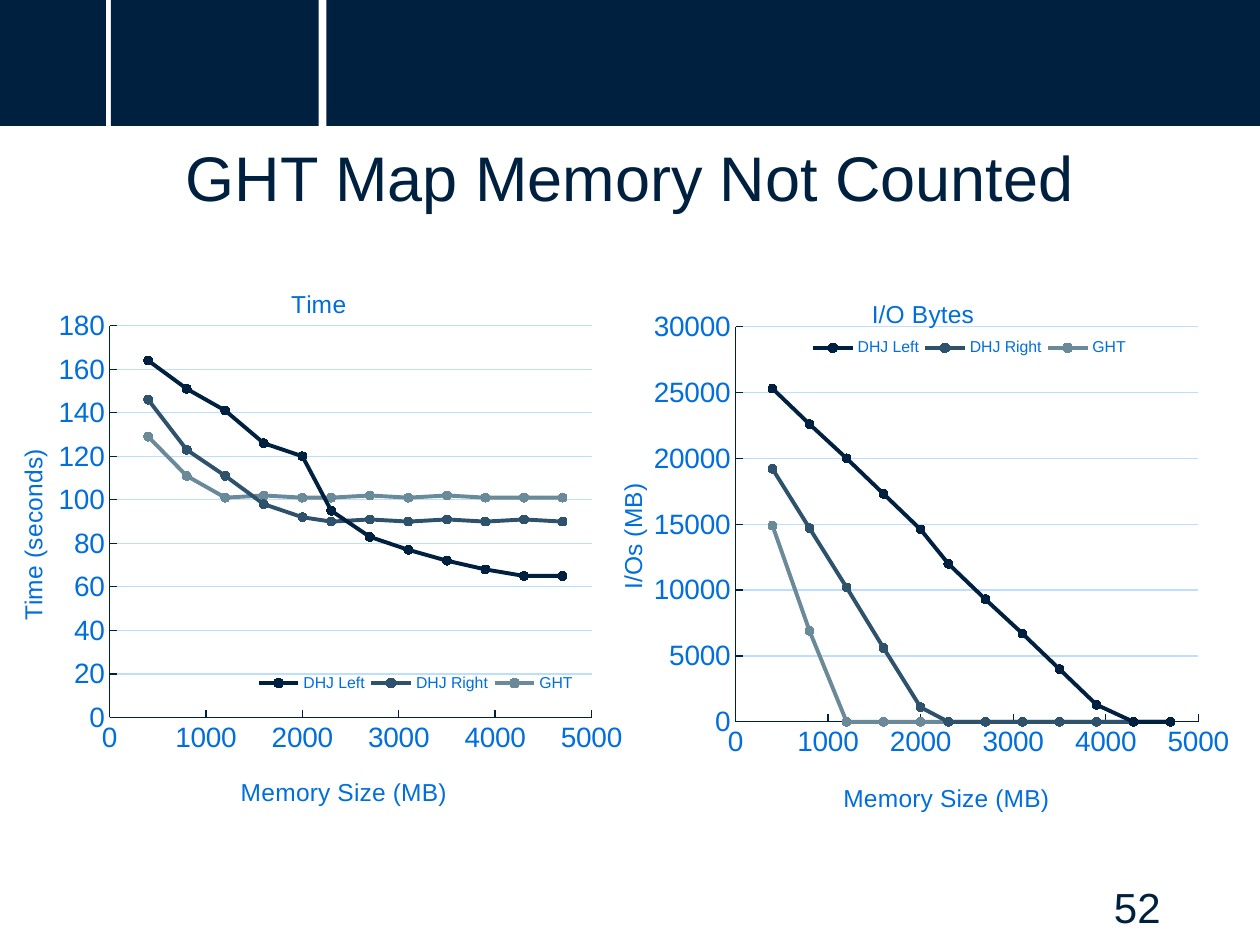
from dataclasses import dataclass

from pptx import Presentation
from pptx.chart.data import XyChartData
from pptx.dml.color import RGBColor
from pptx.enum.chart import XL_CHART_TYPE, XL_LEGEND_POSITION, XL_MARKER_STYLE, XL_TICK_MARK
from pptx.enum.shapes import MSO_SHAPE
from pptx.enum.text import MSO_ANCHOR, PP_ALIGN
from pptx.oxml import parse_xml
from pptx.oxml.ns import nsdecls
from pptx.util import Inches, Pt

NAVY = RGBColor(0x00, 0x20, 0x40)
SLATE = RGBColor(0x2E, 0x52, 0x6B)
STEEL = RGBColor(0x6A, 0x89, 0x99)
BLUE = RGBColor(0x00, 0x6E, 0xDC)
GRID = RGBColor(0xBC, 0xDE, 0xFF)
FONT = "Arial"
SERIES = (("DHJ Left", NAVY), ("DHJ Right", SLATE), ("GHT", STEEL))
MEMORY = [round(391 * step, -2) for step in range(1, 13)]


@dataclass
class Panel:
    title: str
    y_title: str
    box: tuple[float, ...]
    y_max: int
    y_step: int
    values: tuple[list[int], ...]
    plot: tuple[float, ...]
    title_at: tuple[float, ...]
    x_title_at: tuple[float, ...]
    y_title_at: tuple[float, ...]
    legend_at: tuple[float, ...]


PANELS = [
    Panel(
        "Time", "Time (seconds)", (0, 2.07, 5, 4.56), 180, 20,
        ([164, 151, 141, 126, 120, 95, 83, 77, 72, 68, 65, 65],
         [146, 123, 111, 98, 92, 90, 91, 90, 91, 90, 91, 90],
         [129, 111, 101, 102, 101, 101, 102, 101, 102, 101, 101, 101]),
        (0.174, 0.113, 0.765, 0.682),
        (0.455, 0.04), (0.375, 0.89), (0.02, 0.32), (0.4, 0.71, 0.52, 0.05),
    ),
    Panel(
        "I/O Bytes", "I/Os (MB)", (4.76, 2.15, 5.06, 4.52), 30000, 5000,
        ([25300, 22600, 20000, 17300, 14600, 12000, 9300, 6700, 4000, 1300, 0, 0],
         [19200, 14700, 10200, 5600, 1100] + [0] * 7,
         [14900, 6900] + [0] * 10),
        (0.213, 0.098, 0.726, 0.694),
        (0.42, 0.04), (0.375, 0.89), (0.02, 0.365), (0.325, 0.11, 0.51, 0.05),
    ),
]


def style_font(font, size: float, color: RGBColor) -> None:
    font.name = FONT
    font.size = Pt(size)
    font.bold = False
    font.color.rgb = color


def place(parent, box: tuple[float, ...], after: str = "", inner: bool = False) -> None:
    for old in parent.xpath("c:layout"):
        parent.remove(old)
    target = '<c:layoutTarget val="inner"/>' if inner else ""
    keys = ("x", "y", "w", "h")[:len(box)]
    modes = "".join(f'<c:{key}Mode val="edge"/>' for key in keys[:2])
    sizes = "".join(f'<c:{key} val="{value}"/>' for key, value in zip(keys, box))
    layout = parse_xml(
        f'<c:layout {nsdecls("c")}><c:manualLayout>{target}{modes}{sizes}'
        "</c:manualLayout></c:layout>"
    )
    if after:
        parent.xpath(after)[0].addnext(layout)
    else:
        parent.insert(0, layout)


def set_title(owner, text: str) -> None:
    tf = owner.text_frame
    tf.text = text
    style_font(tf.paragraphs[0].runs[0].font, 14, BLUE)


def style_axis(axis, title: str, maximum: int, step: int) -> None:
    axis.minimum_scale = 0
    axis.maximum_scale = maximum
    axis.major_unit = step
    axis.major_tick_mark = XL_TICK_MARK.INSIDE
    axis.minor_tick_mark = XL_TICK_MARK.NONE
    axis.format.line.color.rgb = NAVY
    axis.format.line.width = Pt(0.75)
    style_font(axis.tick_labels.font, 16, BLUE)
    axis.tick_labels.number_format = "General"
    axis.tick_labels.number_format_is_linked = False
    set_title(axis.axis_title, title)


def add_panel(s, panel: Panel) -> None:
    data = XyChartData()
    for (name, _), values in zip(SERIES, panel.values):
        series = data.add_series(name)
        for x, y in zip(MEMORY, values):
            series.add_data_point(x, y)
    chart = s.shapes.add_chart(
        XL_CHART_TYPE.XY_SCATTER_LINES, *map(Inches, panel.box), data
    ).chart
    style_font(chart.font, 10, NAVY)
    chart.has_title = True
    set_title(chart.chart_title, panel.title)

    style_axis(chart.category_axis, "Memory Size (MB)", 5000, 1000)
    chart.category_axis.has_major_gridlines = False
    style_axis(chart.value_axis, panel.y_title, panel.y_max, panel.y_step)
    chart.value_axis.has_major_gridlines = True
    grid = chart.value_axis.major_gridlines.format.line
    grid.color.rgb = GRID
    grid.width = Pt(0.75)

    chart.has_legend = True
    chart.legend.position = XL_LEGEND_POSITION.BOTTOM
    chart.legend.include_in_layout = False
    style_font(chart.legend.font, 9, BLUE)

    plot = chart.plots[0]
    plot.vary_by_categories = False
    for series, (_, color) in zip(plot.series, SERIES):
        series.smooth = False
        series.format.line.color.rgb = color
        series.format.line.width = Pt(2.25)
        marker = series.marker
        marker.style = XL_MARKER_STYLE.CIRCLE
        marker.size = 5
        marker.format.fill.solid()
        marker.format.fill.fore_color.rgb = color
        marker.format.line.color.rgb = color

    root = chart.element
    x_title, y_title = root.xpath(".//c:valAx/c:title")
    body = y_title.xpath(".//a:bodyPr")[0]
    body.set("rot", "-5400000")
    body.set("vert", "horz")
    place(root.xpath("c:chart/c:title")[0], panel.title_at, "c:tx")
    place(x_title, panel.x_title_at, "c:tx")
    place(y_title, panel.y_title_at, "c:tx")
    place(root.xpath(".//c:legend")[0], panel.legend_at, "c:legendPos")
    place(root.xpath(".//c:plotArea")[0], panel.plot, inner=True)


def add_band(s, left: float, width: float) -> None:
    sp = s.shapes.add_shape(
        MSO_SHAPE.RECTANGLE, Inches(left), 0, Inches(width), Inches(1)
    )
    sp.shadow.inherit = False
    sp.fill.solid()
    sp.fill.fore_color.rgb = NAVY
    sp.line.fill.background()


def set_text(sp, text: str, size: float, align: PP_ALIGN) -> None:
    tf = sp.text_frame
    tf.word_wrap = True
    tf.vertical_anchor = MSO_ANCHOR.TOP
    tf.text = text
    p = tf.paragraphs[0]
    p.alignment = align
    style_font(p.runs[0].font, size, NAVY)


def main() -> None:
    prs = Presentation()
    prs.slide_width = Inches(10)
    prs.slide_height = Inches(7.5)
    s = prs.slides.add_slide(prs.slide_layouts[5])

    for left, width in ((0, 0.84), (0.88, 1.65), (2.59, 7.41)):
        add_band(s, left, width)

    title = s.shapes.title
    title.left, title.top = Inches(0.69), Inches(1.05)
    title.width, title.height = Inches(8.62), Inches(0.97)
    set_text(title, "GHT Map Memory Not Counted", 36, PP_ALIGN.CENTER)

    number = s.shapes.add_textbox(Inches(7.06), Inches(6.95), Inches(2.25), Inches(0.4))
    set_text(number, "52", 24, PP_ALIGN.RIGHT)

    for panel in PANELS:
        add_panel(s, panel)

    prs.save("out.pptx")


if __name__ == "__main__":
    main()
